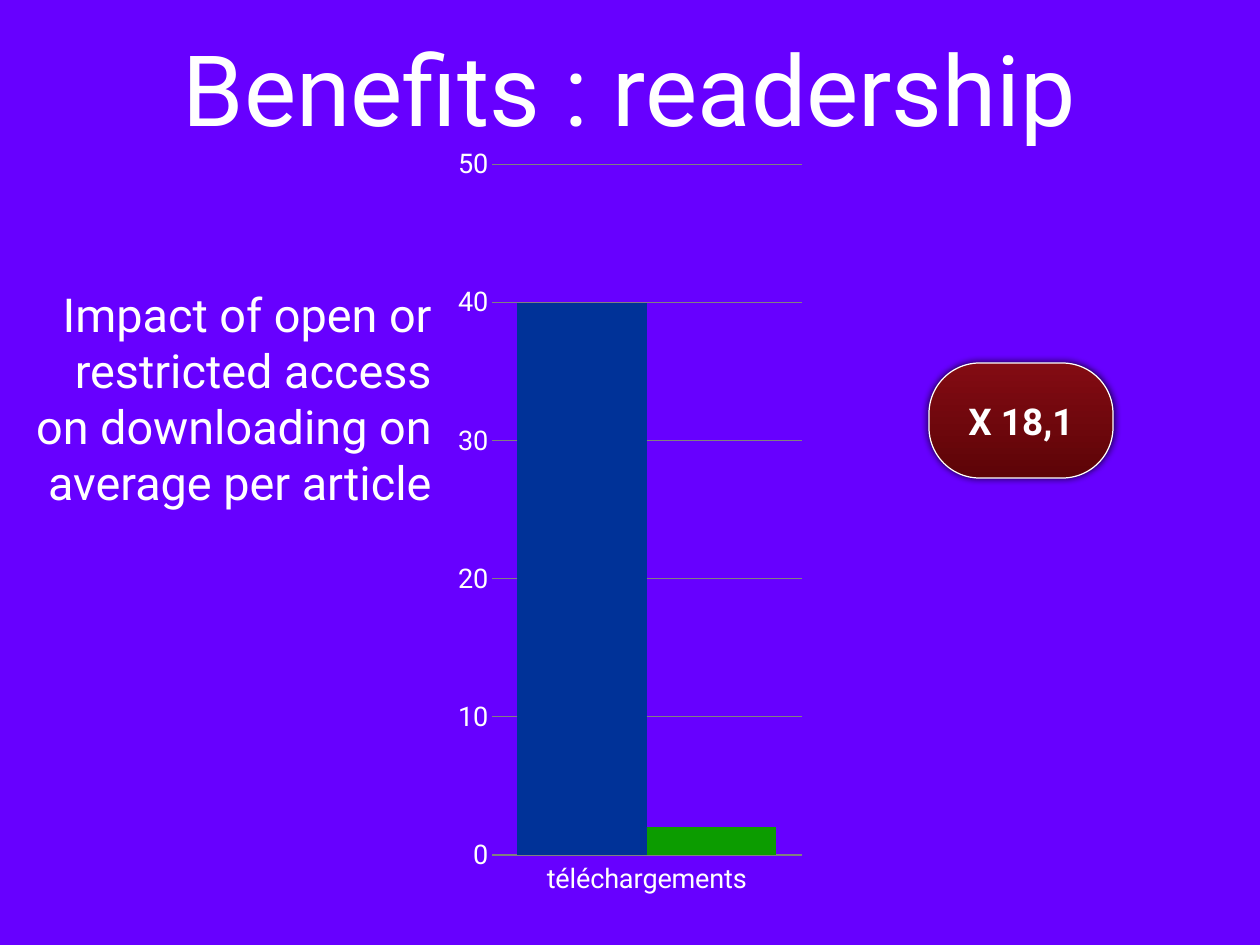
from lxml import etree
from pptx import Presentation, util as u
from pptx.chart.data import CategoryChartData
from pptx.dml.color import RGBColor
from pptx.enum import chart as ch, shapes, text
from pptx.oxml import parse_xml
from pptx.oxml.ns import nsdecls, qn

PX = 10320  # EMU per px
SIZE = (1260, 945)
FONT = "Roboto"
VIOLET = RGBColor(0x67, 0x00, 0xFF)
WHITE = RGBColor(0xFF, 0xFF, 0xFF)
GREY = RGBColor(0x80, 0x80, 0x80)
BLUE = RGBColor(0x00, 0x32, 0x98)
GREEN = RGBColor(0x0C, 0x9C, 0x00)
REDS = (RGBColor(0x83, 0x0B, 0x13), RGBColor(0x5D, 0x04, 0x07))

TITLE = ("Benefits : readership", (123, -31, 1014, 237))
BODY = ("Impact of open or restricted access on downloading on average per article",
        (34, 230, 398, 335))
BADGE = ("X 18,1", (929, 363, 184, 115))
CHART = (458, 149, 345, 747)
PLOT = (491, 164, 311, 691)
CATS = ["téléchargements"]
BARS = [("Series 1", 40, BLUE), ("Series 2", 2, GREEN)]
SHADOW = """<a:effectLst %s>
  <a:outerShdw blurRad="76200" dist="0" dir="18900000" algn="ctr" rotWithShape="0">
    <a:srgbClr val="000000"><a:alpha val="80000"/></a:srgbClr>
  </a:outerShdw>
</a:effectLst>""" % nsdecls("a")


def scale(box):
    return [v * PX for v in box]


def style(font, size, bold=False):
    font.name, font.size, font.bold = FONT, u.Pt(size), bold
    font.color.rgb = WHITE


def write(shape, words, size, align, bold=False):
    frame = shape.text_frame
    frame.word_wrap = True
    frame.auto_size = text.MSO_AUTO_SIZE.NONE
    frame.vertical_anchor = text.MSO_ANCHOR.MIDDLE
    frame.margin_left = frame.margin_right = 0
    frame.margin_top = frame.margin_bottom = 0
    frame.text = words
    para = frame.paragraphs[0]
    para.alignment = align
    style(para.font, size, bold)


def place_plot(chart):
    """Fix the inner plot area as fractions of the chart frame."""
    area = chart._chartSpace.chart.plotArea
    for old in area.findall(qn("c:layout")):
        area.remove(old)
    layout = etree.Element(qn("c:layout"))
    manual = etree.SubElement(layout, qn("c:manualLayout"))
    x, y, w, h = PLOT
    left, top, width, height = CHART
    parts = [("layoutTarget", "inner"), ("xMode", "edge"), ("yMode", "edge"),
             ("x", (x - left) / width), ("y", (y - top) / height),
             ("w", w / width), ("h", h / height)]
    for tag, val in parts:
        etree.SubElement(manual, qn("c:" + tag)).set("val", str(val))
    area.insert(0, layout)


def add_bars(slide):
    data = CategoryChartData()
    data.categories = CATS
    for name, val, _ in BARS:
        data.add_series(name, [val])
    chart = slide.shapes.add_chart(
        ch.XL_CHART_TYPE.COLUMN_CLUSTERED, *scale(CHART), data).chart
    chart.has_legend = chart.has_title = False
    style(chart.font, 10)
    plot = chart.plots[0]
    plot.gap_width, plot.overlap = 40, 0
    plot.vary_by_categories = False
    for bar, (_, _, color) in zip(plot.series, BARS):
        bar.format.fill.solid()
        bar.format.fill.fore_color.rgb = color
    for axis in (chart.category_axis, chart.value_axis):
        axis.major_tick_mark = axis.minor_tick_mark = ch.XL_TICK_MARK.NONE
        axis.format.line.fill.background()
        style(axis.tick_labels.font, 22)
    chart.category_axis.tick_label_position = ch.XL_TICK_LABEL_POSITION.LOW
    axis = chart.value_axis
    axis.minimum_scale, axis.maximum_scale, axis.major_unit = 0, 50, 10
    grid = axis.major_gridlines.format.line
    grid.color.rgb, grid.width = GREY, u.Pt(1)
    place_plot(chart)


def add_badge(slide):
    words, box = BADGE
    badge = slide.shapes.add_shape(
        shapes.MSO_SHAPE.ROUNDED_RECTANGLE, *scale(box))
    badge.adjustments[0] = 0.44
    badge.fill.gradient()
    badge.fill.gradient_angle = 270
    for stop, pos, color in zip(badge.fill.gradient_stops, (0, 1), REDS):
        stop.position, stop.color.rgb = pos, color
    badge.line.color.rgb, badge.line.width = WHITE, u.Pt(1)
    badge._element.spPr.append(parse_xml(SHADOW))
    write(badge, words, 30, text.PP_ALIGN.CENTER, True)


def main():
    deck = Presentation()
    deck.slide_width, deck.slide_height = scale(SIZE)
    slide = deck.slides.add_slide(deck.slide_layouts[5])
    slide.background.fill.solid()
    slide.background.fill.fore_color.rgb = VIOLET

    words, box = TITLE
    title = slide.shapes.title
    title.left, title.top, title.width, title.height = scale(box)
    write(title, words, 80, text.PP_ALIGN.CENTER)

    words, box = BODY
    write(slide.shapes.add_textbox(*scale(box)), words, 38, text.PP_ALIGN.RIGHT)

    add_bars(slide)
    add_badge(slide)
    deck.save("out.pptx")


if __name__ == "__main__":
    main()
